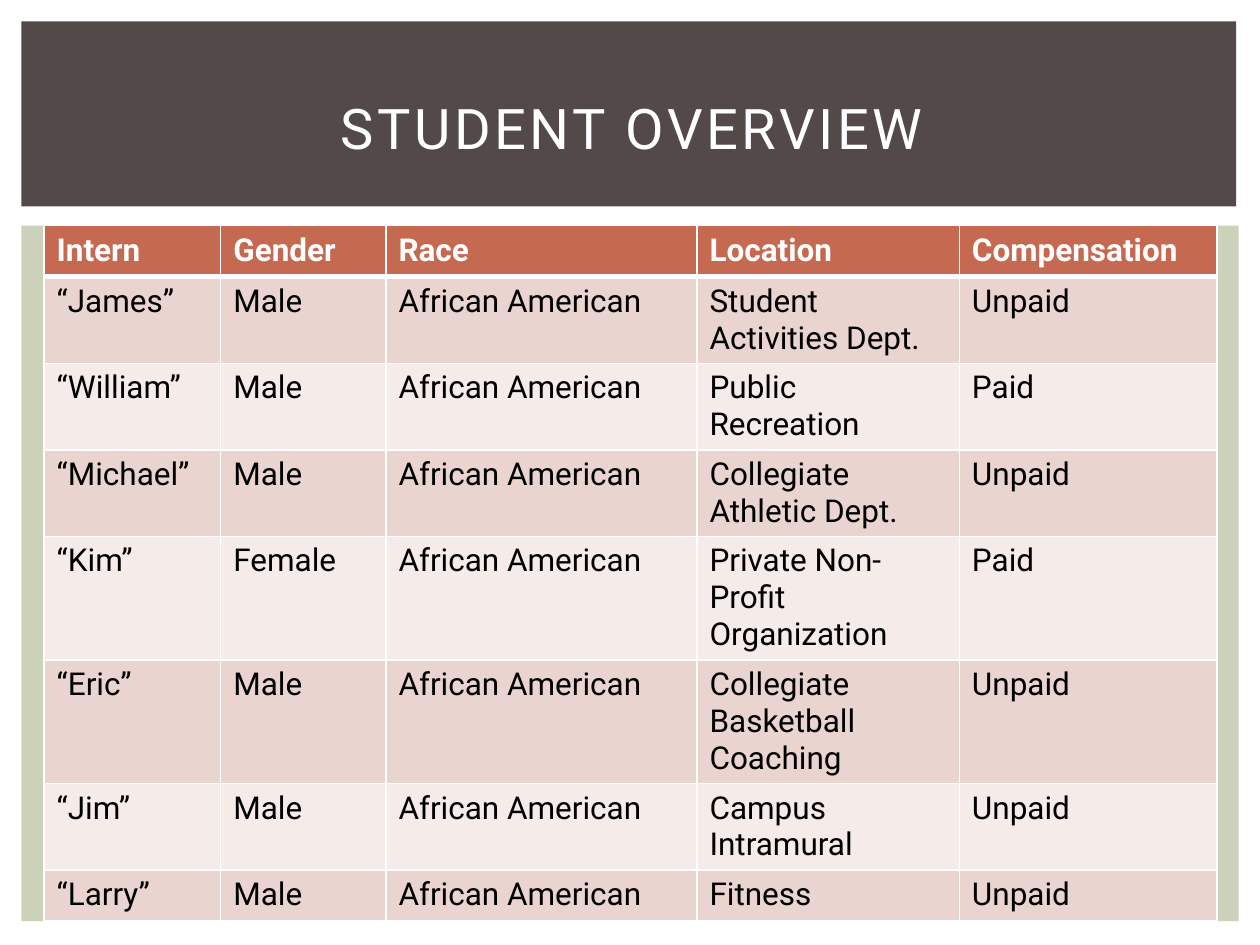
"""Build the student overview slide: a title band over a table of interns."""
from pptx import Presentation
from pptx.dml.color import RGBColor
from pptx.enum import shapes, text
from pptx.oxml import ns
from pptx.util import Cm, Pt
from lxml import etree

FONT = "Roboto"
WHITE = RGBColor(0xFF, 0xFF, 0xFF)
BLACK = RGBColor(0x00, 0x00, 0x00)
SAGE = RGBColor(0xCC, 0xD1, 0xB9)
BROWN = RGBColor(0x53, 0x49, 0x49)
RUST = RGBColor(0xC6, 0x69, 0x51)
ROSE = RGBColor(0xEA, 0xD4, 0xD0)
BLUSH = RGBColor(0xF5, 0xEB, 0xE9)

HEADER = ("Intern", "Gender", "Race", "Location", "Compensation")
RACE = "African American"
INTERNS = (
    ("“James”", "Male", RACE, "Student Activities Dept.", "Unpaid"),
    ("“William”", "Male", RACE, "Public Recreation", "Paid"),
    ("“Michael”", "Male", RACE, "Collegiate Athletic Dept.", "Unpaid"),
    ("“Kim”", "Female", RACE, "Private Non-Profit Organization", "Paid"),
    ("“Eric”", "Male", RACE, "Collegiate Basketball Coaching", "Unpaid"),
    ("“Jim”", "Male", RACE, "Campus Intramural", "Unpaid"),
    ("“Larry”", "Male", RACE, "Fitness", "Unpaid"),
)
COL_WIDTHS = (3.56, 3.33, 6.27, 5.29, 5.19)
ROW_HEIGHT = 1.03


def write(tf, words, size=18, color=BLACK, bold=False, align=None, spacing=None):
    """Put one formatted run into a text frame."""
    p = tf.paragraphs[0]
    p.alignment = align
    r = p.add_run()
    r.text = words
    r.font.name = FONT
    r.font.size = Pt(size)
    r.font.bold = bold
    r.font.color.rgb = color
    if spacing:
        r.font._element.set("spc", str(spacing * 100))


def add_panel(slide, left, top, width, height, color):
    """Add a plain filled rectangle."""
    sp = slide.shapes.add_shape(
        shapes.MSO_SHAPE.RECTANGLE, Cm(left), Cm(top), Cm(width), Cm(height))
    sp.shadow.inherit = False
    sp.fill.solid()
    sp.fill.fore_color.rgb = color
    sp.line.fill.background()


def set_borders(cell, bottom=1, top=1):
    """Give a cell white borders, with widths in points."""
    tc_pr = cell._tc.get_or_add_tcPr()
    for side, width in (("L", 1), ("R", 1), ("T", top), ("B", bottom)):
        ln = etree.SubElement(tc_pr, ns.qn(f"a:ln{side}"), w=str(Pt(width)))
        fill = etree.SubElement(ln, ns.qn("a:solidFill"))
        etree.SubElement(fill, ns.qn("a:srgbClr"), val=str(WHITE))


def add_intern_table(slide, left, top):
    """Add the table with a header row and alternating body rows."""
    rows = (HEADER, *INTERNS)
    table = slide.shapes.add_table(
        len(rows), len(HEADER), Cm(left), Cm(top),
        Cm(sum(COL_WIDTHS)), Cm(ROW_HEIGHT * len(rows))).table
    for column, width in zip(table.columns, COL_WIDTHS):
        column.width = Cm(width)
    for i, row in enumerate(rows):
        is_header = i == 0
        fill = RUST if is_header else (ROSE if i % 2 else BLUSH)
        for j, words in enumerate(row):
            cell = table.cell(i, j)
            set_borders(cell, bottom=3 if is_header else 1, top=3 if i == 1 else 1)
            cell.fill.solid()
            cell.fill.fore_color.rgb = fill
            write(cell.text_frame, words, bold=is_header,
                  color=WHITE if is_header else BLACK)


def set_title(slide, words):
    """Place the title placeholder in front of the band and fill it."""
    sp = slide.shapes.title
    sp.left, sp.top, sp.width, sp.height = Cm(0.89), Cm(0.69), Cm(23.7), Cm(3.73)
    slide.shapes._spTree.append(sp._element)
    tf = sp.text_frame
    tf.word_wrap = True
    tf.vertical_anchor = text.MSO_ANCHOR.MIDDLE
    write(tf, words, size=32, color=WHITE, align=text.PP_ALIGN.CENTER, spacing=2)


def main():
    """Build and save the slide."""
    prs = Presentation()
    prs.slide_width, prs.slide_height = Cm(25.4), Cm(19.05)
    slide = prs.slides.add_slide(prs.slide_layouts[5])
    add_panel(slide, 0.43, 4.55, 24.54, 14.02, SAGE)
    add_panel(slide, 0.43, 0.43, 24.49, 3.73, BROWN)
    add_intern_table(slide, 0.89, 4.55)
    set_title(slide, "STUDENT OVERVIEW")
    prs.save("out.pptx")


if __name__ == "__main__":
    main()
